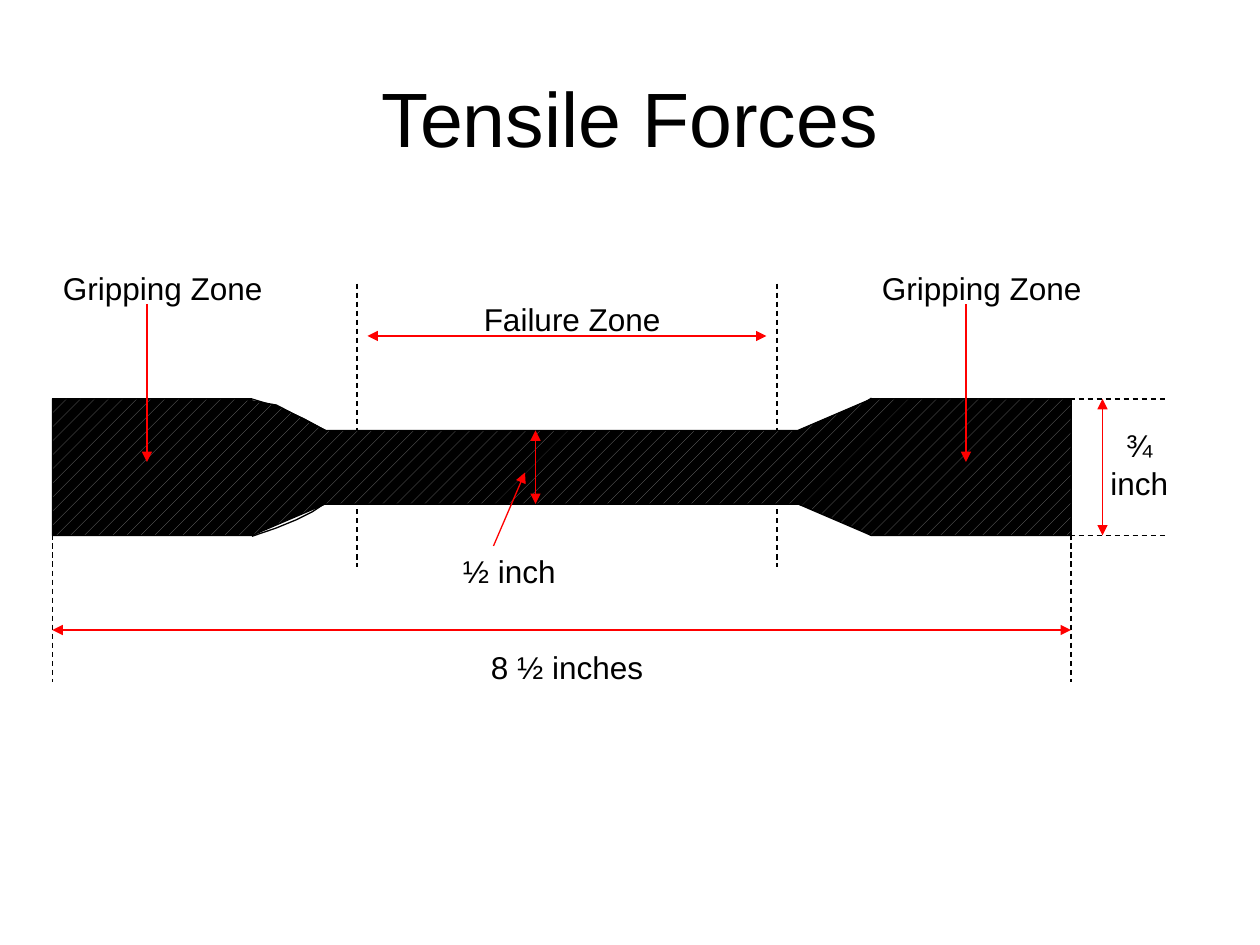
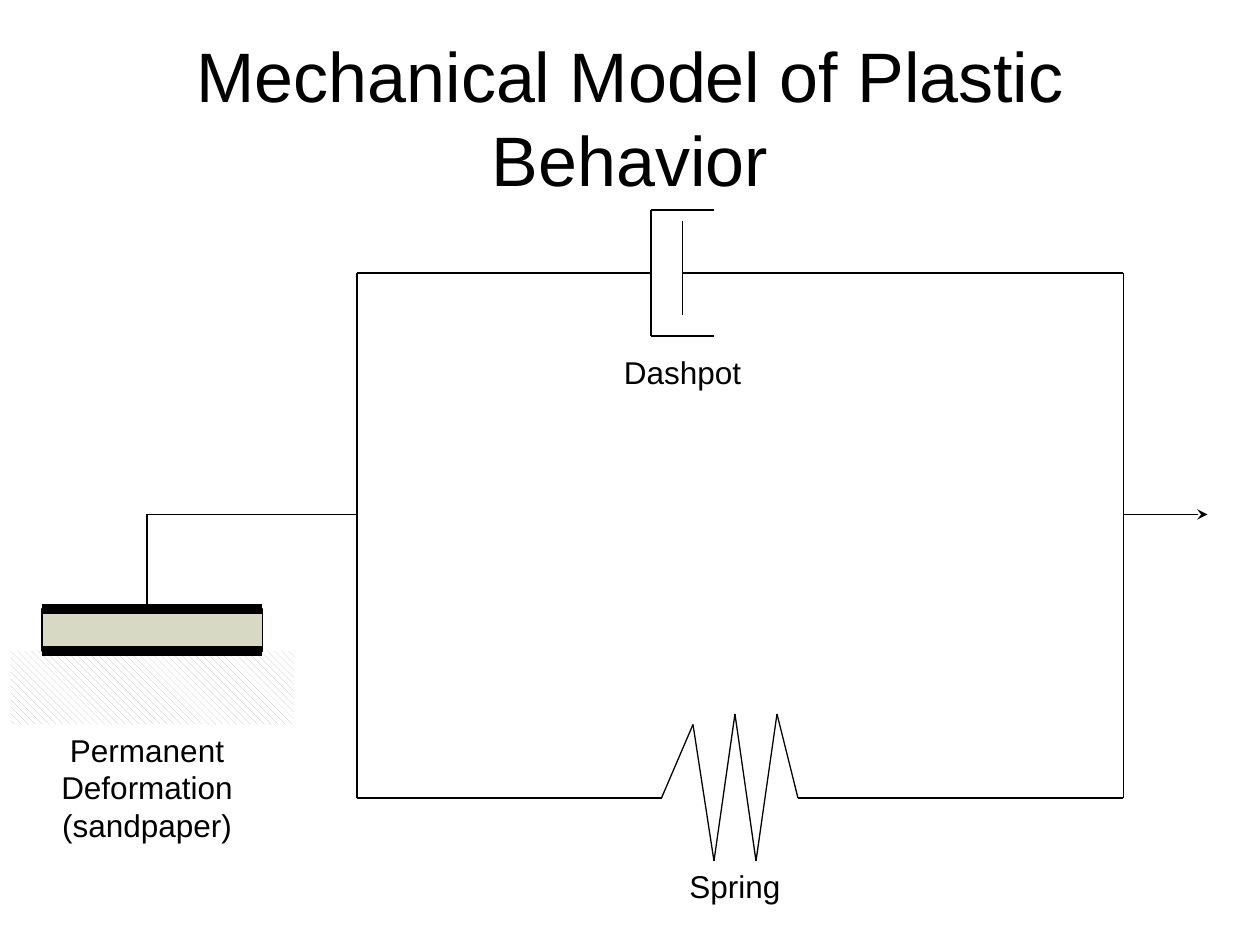
"""Builds two slides: a tensile test specimen and a mechanical model of plastic behavior."""
from itertools import pairwise

from lxml import etree
from pptx import Presentation
from pptx import util as u
from pptx.dml.color import RGBColor
from pptx.enum import dml, shapes, text
from pptx.oxml.ns import qn

Pt = u.Pt
FONT = "Arial"
COLORS = {name: RGBColor.from_string(value) for name, value in {
    "ink": "000000", "arrow": "FF0000", "speck": "808080",
    "hatch": "C0C0C0", "paper": "FFFFFF", "block": "D8D9C5"}.items()}


def add_line(s, start, end, color="ink", width=0.75, dash=False, head=None, tail=None):
    cx = s.shapes.add_connector(shapes.MSO_CONNECTOR.STRAIGHT, *map(Pt, (*start, *end)))
    etree.SubElement(cx._element.spPr, qn("a:effectLst"))
    cx.line.color.rgb = COLORS[color]
    cx.line.width = Pt(width)
    if dash:
        cx.line.dash_style = dml.MSO_LINE.DASH
    ln = cx.line._get_or_add_ln()
    for tag, kind in (("a:headEnd", head), ("a:tailEnd", tail)):
        if kind:
            etree.SubElement(ln, qn(tag), type=kind)


def add_text(s, wording, x, y, w, h, size=18, anchor=text.MSO_ANCHOR.TOP):
    tf = s.shapes.add_textbox(Pt(x), Pt(y), Pt(w), Pt(h)).text_frame
    tf.word_wrap = True
    tf.vertical_anchor = anchor
    p = tf.paragraphs[0]
    p.alignment = text.PP_ALIGN.CENTER
    r = p.add_run()
    r.text = wording
    r.font.name = FONT
    r.font.size = Pt(size)
    r.font.color.rgb = COLORS["ink"]


prs = Presentation()
prs.slide_width, prs.slide_height = Pt(720), Pt(540)
slides = []
for title, size in (("Tensile Forces", 44), ("Mechanical Model of Plastic Behavior", 40)):
    s = prs.slides.add_slide(prs.slide_layouts[6])
    add_text(s, title, 36, 21.6, 648, 90, size, text.MSO_ANCHOR.MIDDLE)
    slides.append(s)
tensile, model = slides

left, right, top, bottom = 30, 612, 228, 306
neck_left, neck_right, neck_top, neck_bottom = 186, 456, 246, 288
grip_left, grip_right = 144, 498

for y in (top, bottom):
    add_line(tensile, (left, y), (grip_left, y))
    add_line(tensile, (grip_right, y), (right, y))
    add_line(tensile, (right - 6, y), (666, y), dash=True)
for y in (neck_top, neck_bottom):
    add_line(tensile, (neck_left, y), (neck_right, y))
for x in (left, right):
    add_line(tensile, (x, top), (x, bottom))
    add_line(tensile, (x, top), (x, 390), dash=True)
for x in (204, 444):
    add_line(tensile, (x, 162), (x, 324), dash=True)

for start, end in (((210, 192), (438, 192)), ((left, 360), (right, 360)),
                   ((630, top), (630, bottom))):
    add_line(tensile, start, end, "arrow", head="triangle", tail="triangle")

for wording, x, y, w, h in (
        ("¾ inch", 618, 240, 66, 50), ("½ inch", 252, 312, 78, 29),
        ("8 ½ inches", 246, 367, 156, 29), ("Failure Zone", 246, 168, 162, 29),
        ("Gripping Zone", 24, 150, 138, 29), ("Gripping Zone", 492, 150, 138, 29)):
    add_text(tensile, wording, x, y, w, h)

falling = [(0, 0), (8.5, 2.6), (18, 6), (29.6, 11.3), (42, 18)]
rising = [(0, 0), (-7.5, 5), (-16.5, 9.5), (-28.4, 14.4), (-42, 19)]
outlines = [[(x + dx, y + dy) for dx, dy in curve] for x, y, curve in (
    (grip_left, top, falling), (neck_right, neck_bottom, falling),
    (grip_right, top - 0.5, rising), (neck_left, neck_bottom - 0.5, rising))]
specimen = [(left, top), (138, top), (158, 231.5), (neck_left, neck_top),
            (neck_right, neck_top), (grip_right, top), (right, top), (right, bottom),
            (grip_right, bottom), (neck_right, neck_bottom), (neck_left, neck_bottom),
            (grip_left, bottom), (left, bottom)]
for points in outlines + [specimen]:
    (x, y), *rest = [(Pt(px), Pt(py)) for px, py in points]
    fb = tensile.shapes.build_freeform(x, y)
    fb.add_line_segments(rest, close=points is specimen)
    sp = fb.convert_to_shape()
    sp.shadow.inherit = False
    sp.line.color.rgb = COLORS["ink"]
    sp.line.width = Pt(0.75)
    if points is specimen:
        sp.fill.patterned()
        sp.fill.pattern = dml.MSO_PATTERN.PERCENT_10
        sp.fill.fore_color.rgb = COLORS["speck"]
        sp.fill.back_color.rgb = COLORS["ink"]
    else:
        sp.fill.background()

add_line(tensile, (306, neck_top), (306, neck_bottom), "arrow", head="triangle", tail="triangle")
for start, end in (((282, 312), (300, 270)), ((84, 174), (84, 264)), ((552, 174), (552, 264))):
    add_line(tensile, start, end, "arrow", tail="triangle")

sandpaper, block = [
    model.shapes.add_shape(shapes.MSO_SHAPE.RECTANGLE, *map(Pt, box))
    for box in ((6, 372, 162, 42), (24, 348, 126, 24))]
sandpaper.shadow.inherit = block.shadow.inherit = False
sandpaper.fill.patterned()
sandpaper.fill.pattern = dml.MSO_PATTERN.WIDE_DOWNWARD_DIAGONAL
sandpaper.fill.fore_color.rgb = COLORS["hatch"]
sandpaper.fill.back_color.rgb = COLORS["paper"]
sandpaper.line.fill.background()
block.fill.solid()
block.fill.fore_color.rgb = COLORS["block"]
block.line.color.rgb = COLORS["ink"]
block.line.width = Pt(0.75)
for y in (348, 372):
    add_line(model, (24, y), (150, y), width=6)

stem = [(84, 348), (84, 294), (204, 294)]
spring = [(378, 456), (396, 414), (408, 492), (420, 408), (432, 492), (444, 408), (456, 456)]
circuit = [(372, 156), (204, 156), (204, 456), *spring, (642, 456), (642, 156), (390, 156)]
cylinder = [(408, 120), (372, 120), (372, 192), (408, 192)]
piston = [(390, 126), (390, 180)]
for chain in (stem, circuit, cylinder, piston):
    for start, end in pairwise(chain):
        add_line(model, start, end)
add_line(model, (642, 294), (690, 294), tail="stealth")

for wording, x, y, w, h in (
        ("Spring", 366, 492, 108, 29), ("Dashpot", 324, 198, 132, 29),
        ("Permanent Deformation (sandpaper)", 6, 414, 156, 72)):
    add_text(model, wording, x, y, w, h)

prs.save("out.pptx")
